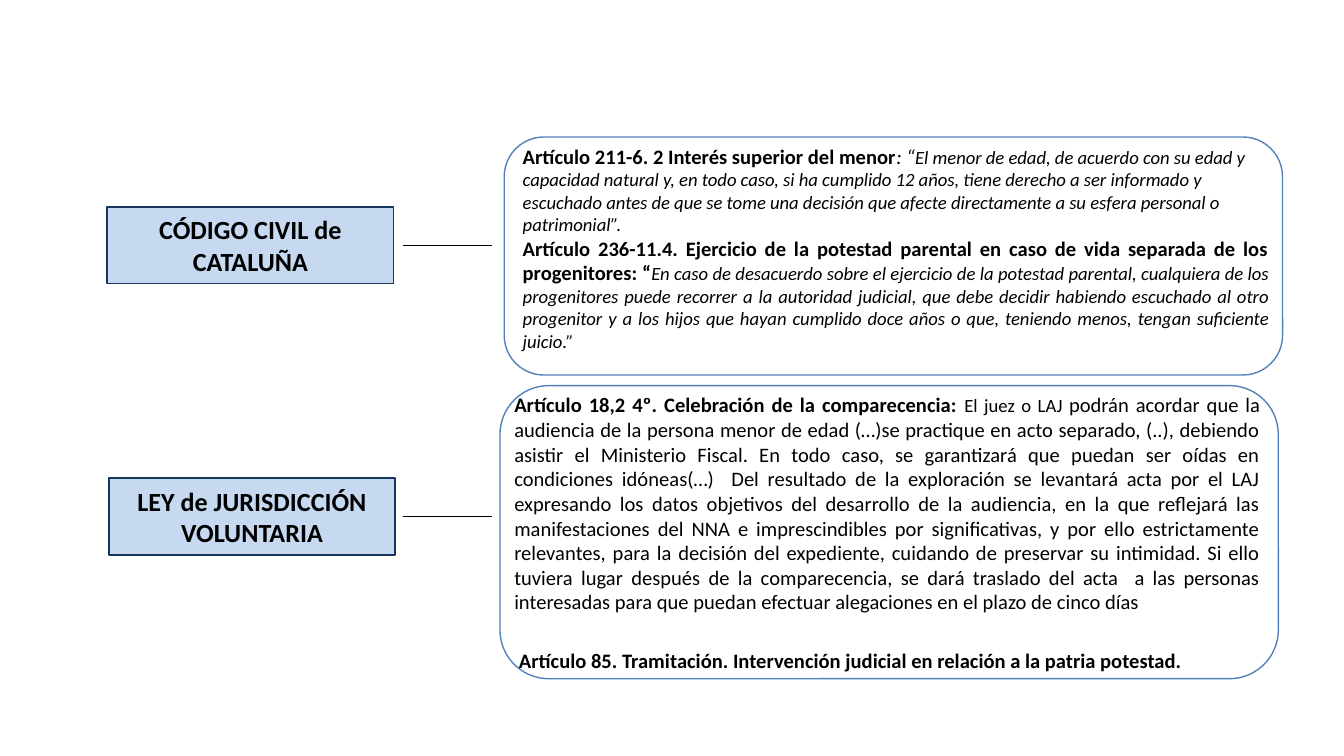
from dataclasses import dataclass

from pptx import Presentation
from pptx.dml.color import RGBColor
from pptx.enum.shapes import MSO_CONNECTOR, MSO_SHAPE
from pptx.enum.text import MSO_ANCHOR, PP_ALIGN
from pptx.oxml.ns import qn
from pptx.util import Cm, Pt
from lxml.etree import SubElement


@dataclass(frozen=True)
class Theme:
    font: str = "Calibri"
    text: RGBColor = RGBColor(0x00, 0x00, 0x00)
    label_fill: RGBColor = RGBColor(0xC6, 0xD9, 0xF1)
    label_line: RGBColor = RGBColor(0x17, 0x37, 0x5E)
    frame_line: RGBColor = RGBColor(0x4F, 0x81, 0xBD)
    label_size: Pt = Pt(14)
    body_size: Pt = Pt(11)
    quote_size: Pt = Pt(10)
    label_width: Pt = Pt(1)
    thin_width: Pt = Pt(0.75)


THEME = Theme()
LABEL_HEIGHT = 1.45

CIVIL_CODE = [
    (PP_ALIGN.LEFT, [
        ("Artículo 211-6. 2 Interés superior del menor", THEME.body_size, True, False),
        (": “", THEME.body_size, False, True),
        ("El menor de edad, de acuerdo con su edad y capacidad natural y, en todo caso, "
         "si ha cumplido 12 años, tiene derecho a ser informado y escuchado antes de que "
         "se tome una decisión que afecte directamente a su esfera personal o "
         "patrimonial”.", THEME.quote_size, False, True),
    ]),
    (PP_ALIGN.JUSTIFY, [
        ("Artículo 236-11.4. Ejercicio de la potestad parental en caso de vida separada "
         "de los progenitores: “", THEME.body_size, True, False),
        ("En caso de desacuerdo sobre el ejercicio de la potestad parental, cualquiera de "
         "los progenitores puede recorrer a la autoridad judicial, que debe decidir "
         "habiendo escuchado al otro progenitor y a los hijos que hayan cumplido doce "
         "años o que, teniendo menos, tengan suficiente juicio.”",
         THEME.quote_size, False, True),
    ]),
]

JURISDICTION_LAW = [
    (PP_ALIGN.JUSTIFY, [
        ("Artículo 18,2 4º. Celebración de la comparecencia: ",
         THEME.body_size, True, False),
        ("El juez o LAJ ", THEME.quote_size, False, False),
        ("podrán acordar que la audiencia de la persona menor de edad (…)se practique en "
         "acto separado, (..), debiendo asistir el Ministerio Fiscal. En todo caso, se "
         "garantizará que puedan ser oídas en condiciones idóneas(…)  Del resultado de la "
         "exploración se levantará acta por el LAJ expresando los datos objetivos del "
         "desarrollo de la audiencia, en la que reflejará las manifestaciones del NNA e "
         "imprescindibles por significativas, y por ello estrictamente relevantes, para "
         "la decisión del expediente, cuidando de preservar su intimidad. Si ello tuviera "
         "lugar después de la comparecencia, se dará traslado del acta  a las personas "
         "interesadas para que puedan efectuar alegaciones en el plazo de cinco días",
         THEME.body_size, False, False),
    ]),
    (PP_ALIGN.JUSTIFY, [
        (" Artículo 85. Tramitación. Intervención judicial en relación a la patria "
         "potestad.", THEME.body_size, True, False),
    ]),
]


def add_span(para, text, size, bold, italic=False):
    """Append one formatted run to a paragraph."""
    span = para.add_run()
    span.text = text
    span.font.name = THEME.font
    span.font.size = size
    span.font.bold = bold
    span.font.italic = italic
    span.font.color.rgb = THEME.text


def add_outline(page, kind, left, top, width, height, color, weight):
    """Add an unfilled, shadowless shape with a coloured outline."""
    shape = page.shapes.add_shape(kind, Cm(left), Cm(top), Cm(width), Cm(height))
    shape.shadow.inherit = False
    shape.fill.background()
    shape.line.color.rgb = color
    shape.line.width = weight
    return shape


def add_label(page, left, top, text):
    """Add the filled box that names a law."""
    box = add_outline(page, MSO_SHAPE.RECTANGLE, left, top, 5.41, LABEL_HEIGHT,
                      THEME.label_line, THEME.label_width)
    box.fill.solid()
    box.fill.fore_color.rgb = THEME.label_fill
    frame = box.text_frame
    frame.word_wrap = True
    frame.vertical_anchor = MSO_ANCHOR.MIDDLE
    para = frame.paragraphs[0]
    para.alignment = PP_ALIGN.CENTER
    add_span(para, text, THEME.label_size, True)


def add_articles(page, left, top, height, articles, gap):
    """Add a text box with one paragraph per article."""
    box = page.shapes.add_textbox(Cm(left), Cm(top), Cm(14.6), Cm(height))
    frame = box.text_frame
    frame.word_wrap = True
    for index, (alignment, spans) in enumerate(articles):
        para = frame.add_paragraph() if index else frame.paragraphs[0]
        para.alignment = alignment
        para.space_before = Pt(gap if index else 0)
        for span in spans:
            add_span(para, *span)


def add_link(page, y):
    """Add the horizontal line between a label and its articles."""
    link = page.shapes.add_connector(MSO_CONNECTOR.STRAIGHT,
                                     Cm(7.62), Cm(y), Cm(9.3), Cm(y))
    link.line.color.rgb = THEME.text
    link.line.width = THEME.thin_width
    SubElement(link._element.spPr, qn("a:effectLst"))


def add_law(page, name, label_at, frame_box, text_box, articles, gap=0):
    """Add a law: its label, its link and its framed articles."""
    add_label(page, *label_at, name)
    add_outline(page, MSO_SHAPE.ROUNDED_RECTANGLE, *frame_box,
                THEME.frame_line, THEME.thin_width)
    add_articles(page, *text_box, articles, gap)
    add_link(page, label_at[1] + LABEL_HEIGHT / 2)


def main():
    """Build and save the deck."""
    deck = Presentation()
    deck.slide_width, deck.slide_height = Cm(25.4), Cm(14.29)
    page = deck.slides.add_slide(deck.slide_layouts[6])
    add_law(page, "CÓDIGO CIVIL de CATALUÑA", (2.03, 3.91),
            (9.53, 2.59, 14.71, 4.5), (9.63, 2.59, 4.7), CIVIL_CODE)
    add_law(page, "LEY de JURISDICCIÓN VOLUNTARIA", (2.06, 9.04),
            (9.45, 7.29, 14.71, 5.54), (9.47, 7.29, 5.59), JURISDICTION_LAW, gap=18)
    deck.save("out.pptx")


if __name__ == "__main__":
    main()
